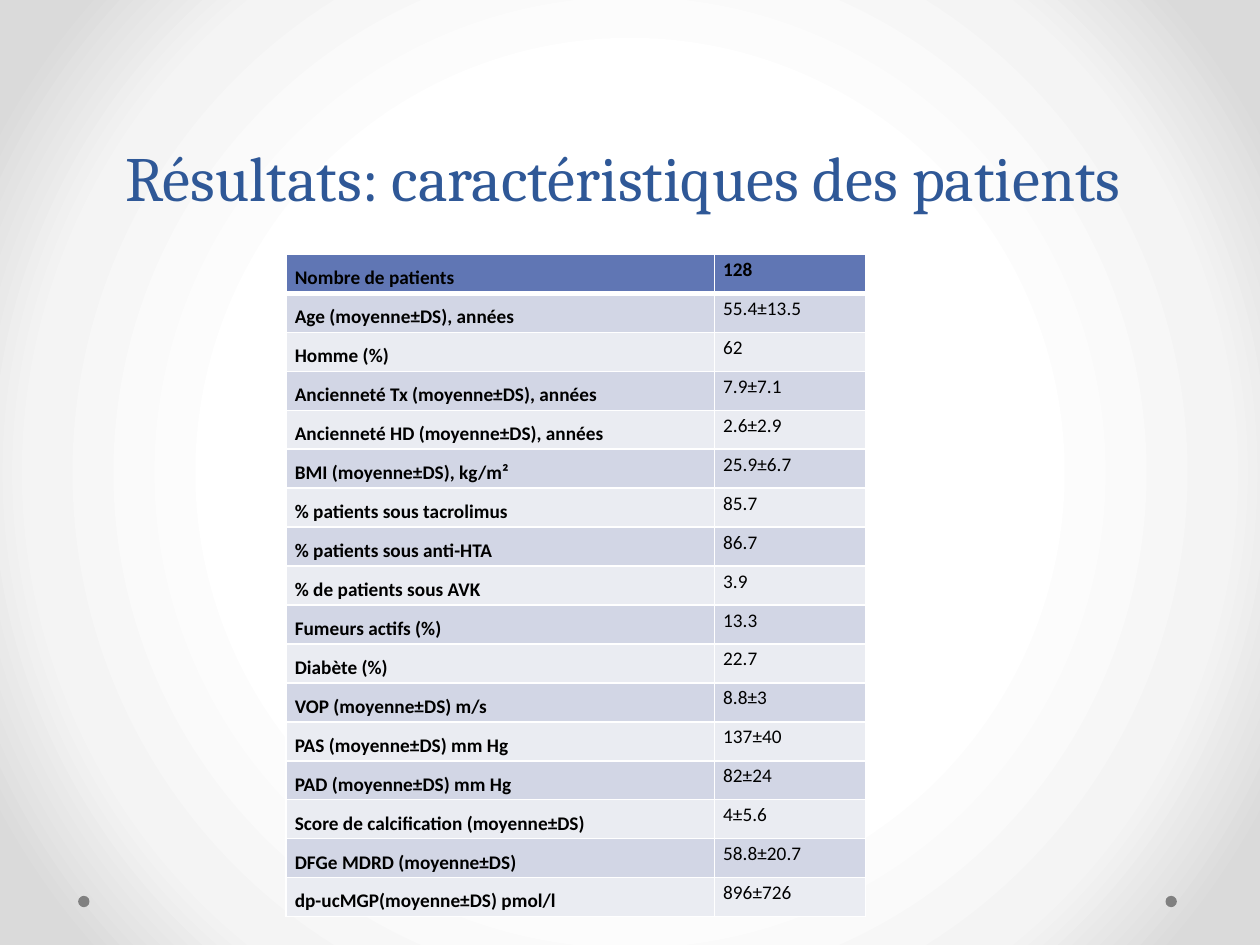
from dataclasses import dataclass

from pptx import Presentation
from pptx import util as u
from pptx.dml.color import RGBColor
from pptx.enum import shapes, text
from pptx.oxml import parse_xml
from pptx.oxml.ns import nsdecls

COLORS = {
    "title": "2F5897",
    "text": "000000",
    "header": "6076B4",
    "band_dark": "D2D6E5",
    "band_light": "EAECF2",
    "border": "FFFFFF",
    "dot": "808080",
}
BACKGROUND_STOPS = [(50, "FFFFFF"), (76, "F4F4F4"), (92, "DADADA")]
COLUMN_WIDTHS = (3.4, 1.2)
TABLE_HEIGHT = 5.26


@dataclass
class Measure:
    label: str
    value: str


MEASURES = [
    Measure("Nombre de patients", "128"),
    Measure("Age (moyenne±DS), années", "55.4±13.5"),
    Measure("Homme (%)", "62"),
    Measure("Ancienneté Tx (moyenne±DS), années", "7.9±7.1"),
    Measure("Ancienneté HD (moyenne±DS), années", "2.6±2.9"),
    Measure("BMI (moyenne±DS), kg/m²", "25.9±6.7"),
    Measure("% patients sous tacrolimus", "85.7"),
    Measure("% patients sous anti-HTA", "86.7"),
    Measure("% de patients sous AVK", "3.9"),
    Measure("Fumeurs actifs (%)", "13.3"),
    Measure("Diabète (%)", "22.7"),
    Measure("VOP (moyenne±DS) m/s", "8.8±3"),
    Measure("PAS (moyenne±DS) mm Hg", "137±40"),
    Measure("PAD (moyenne±DS) mm Hg", "82±24"),
    Measure("Score de calcification (moyenne±DS)", "4±5.6"),
    Measure("DFGe MDRD (moyenne±DS)", "58.8±20.7"),
    Measure("dp-ucMGP(moyenne±DS) pmol/l", "896±726"),
]


def color(name: str) -> RGBColor:
    return RGBColor.from_string(COLORS[name])


def add_span(para, words: str, font: str, size: float, ink: str, bold: bool = False) -> None:
    span = para.add_run()
    span.text = words
    span.font.name = font
    span.font.size = u.Pt(size)
    span.font.bold = bold
    span.font.color.rgb = color(ink)


def set_background(page) -> None:
    """Radial gradient, spreading from the centre of the page."""
    page.background.fill.solid()
    properties = page.element.xpath(".//p:bgPr")[0]
    stops = "".join(
        f'<a:gs pos="{place * 1000}"><a:srgbClr val="{tone}"/></a:gs>'
        for place, tone in BACKGROUND_STOPS
    )
    gradient = parse_xml(
        f'<a:gradFill {nsdecls("a")} rotWithShape="1"><a:gsLst>{stops}</a:gsLst>'
        '<a:path path="circle"><a:fillToRect l="50000" t="50000" r="50000" b="50000"/>'
        "</a:path></a:gradFill>"
    )
    properties.replace(properties[0], gradient)


def add_dot(page, left: float) -> None:
    dot = page.shapes.add_shape(
        shapes.MSO_SHAPE.OVAL, u.Inches(left), u.Inches(7.11), u.Inches(0.09), u.Inches(0.09)
    )
    dot.shadow.inherit = False
    dot.fill.solid()
    dot.fill.fore_color.rgb = color("dot")
    dot.line.fill.background()


def set_borders(cell, top: float, bottom: float) -> None:
    properties = cell._tc.get_or_add_tcPr()
    widths = {"lnL": 1, "lnR": 1, "lnT": top, "lnB": bottom}
    for place, (side, width) in enumerate(widths.items()):
        properties.insert(place, parse_xml(
            f'<a:{side} {nsdecls("a")} w="{u.Pt(width)}"><a:solidFill>'
            f'<a:srgbClr val="{COLORS["border"]}"/></a:solidFill></a:{side}>'
        ))


def fill_cell(cell, words: str, fill: str, bold: bool, spacing: float) -> None:
    cell.margin_left = cell.margin_right = u.Inches(0.07)
    cell.margin_top = cell.margin_bottom = 0
    cell.fill.solid()
    cell.fill.fore_color.rgb = color(fill)
    para = cell.text_frame.paragraphs[0]
    para.line_spacing = spacing
    add_span(para, words, "Calibri", 11, "text", bold)


def add_measures(page, measures: list[Measure]) -> None:
    table = page.shapes.add_table(
        len(measures), 2, u.Inches(2.27), u.Inches(2.02),
        u.Inches(sum(COLUMN_WIDTHS)), u.Inches(TABLE_HEIGHT),
    ).table
    for column, width in zip(table.columns, COLUMN_WIDTHS):
        column.width = u.Inches(width)
    for index, measure in enumerate(measures):
        header = index == 0
        fill = "header" if header else "band_dark" if index % 2 else "band_light"
        label, value = table.cell(index, 0), table.cell(index, 1)
        fill_cell(label, measure.label, fill, True, 1.5)
        fill_cell(value, measure.value, fill, header, 1.15)
        for cell in (label, value):
            set_borders(cell, top=3 if index == 1 else 1, bottom=3 if header else 1)


def main() -> None:
    deck = Presentation()
    deck.slide_width, deck.slide_height = u.Inches(10), u.Inches(7.5)
    page = deck.slides.add_slide(deck.slide_layouts[5])

    # Background and corner dots
    set_background(page)
    for left in (9.25, 0.62):
        add_dot(page, left)

    # Title
    title = page.shapes.title
    title.left, title.top = u.Inches(0.5), u.Inches(0)
    title.width, title.height = u.Inches(9), u.Inches(1.75)
    frame = title.text_frame
    frame.word_wrap = True
    frame.vertical_anchor = text.MSO_ANCHOR.BOTTOM
    para = frame.paragraphs[0]
    para.alignment = text.PP_ALIGN.CENTER
    para.line_spacing = u.Pt(58)
    add_span(para, "Résultats: caractéristiques des patients ", "Cambria", 36, "title")

    # Patient characteristics
    add_measures(page, MEASURES)

    deck.save("out.pptx")


if __name__ == "__main__":
    main()
